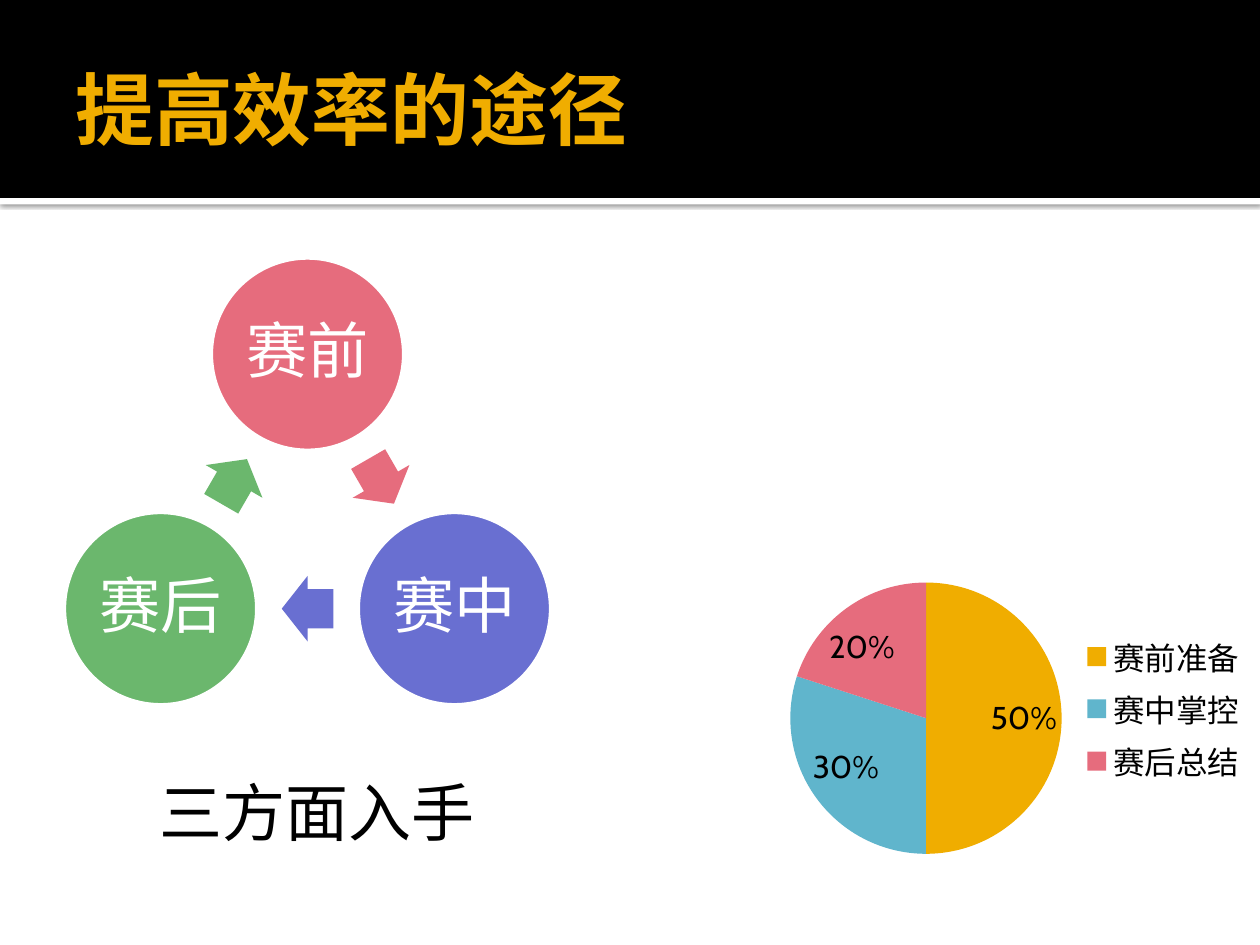
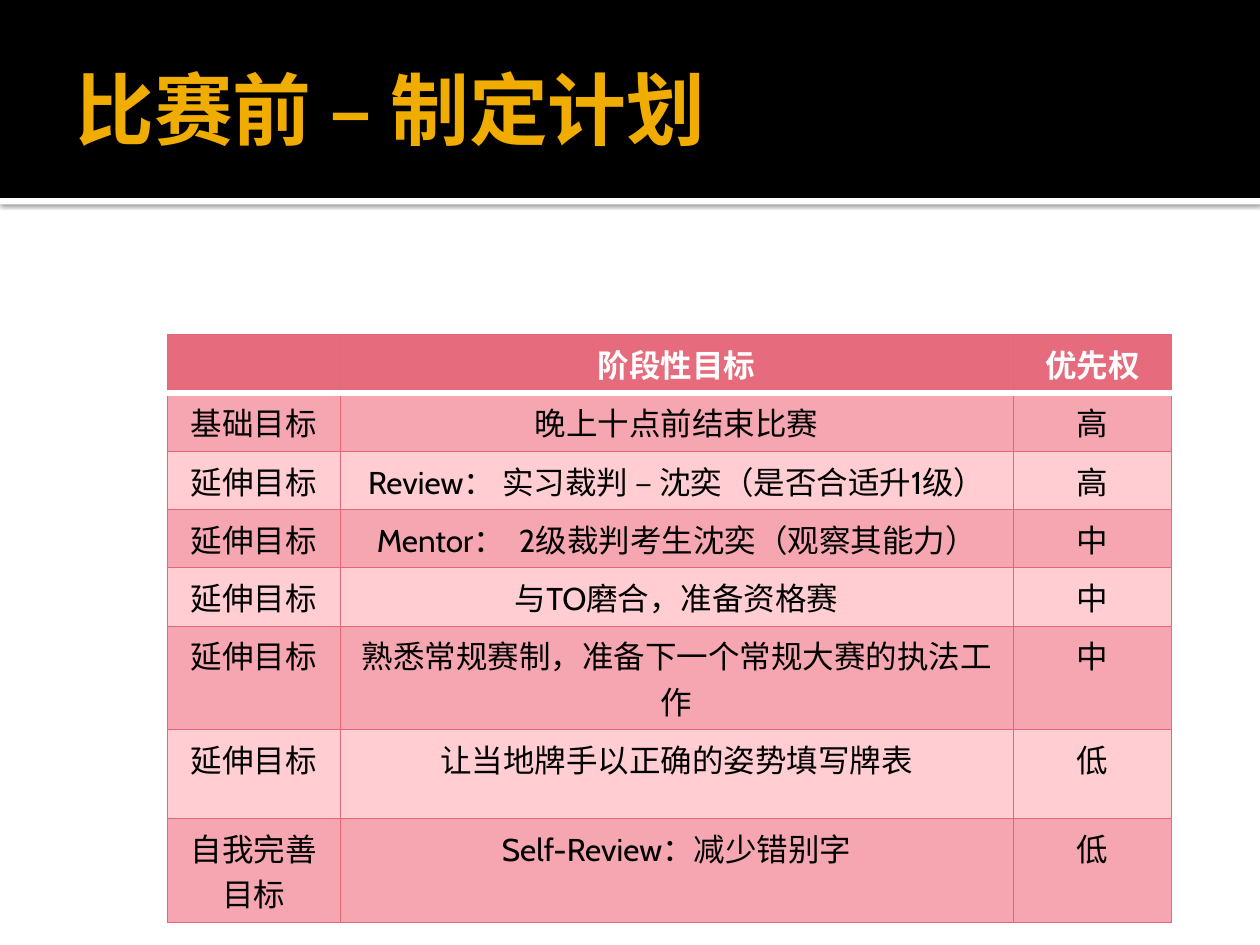
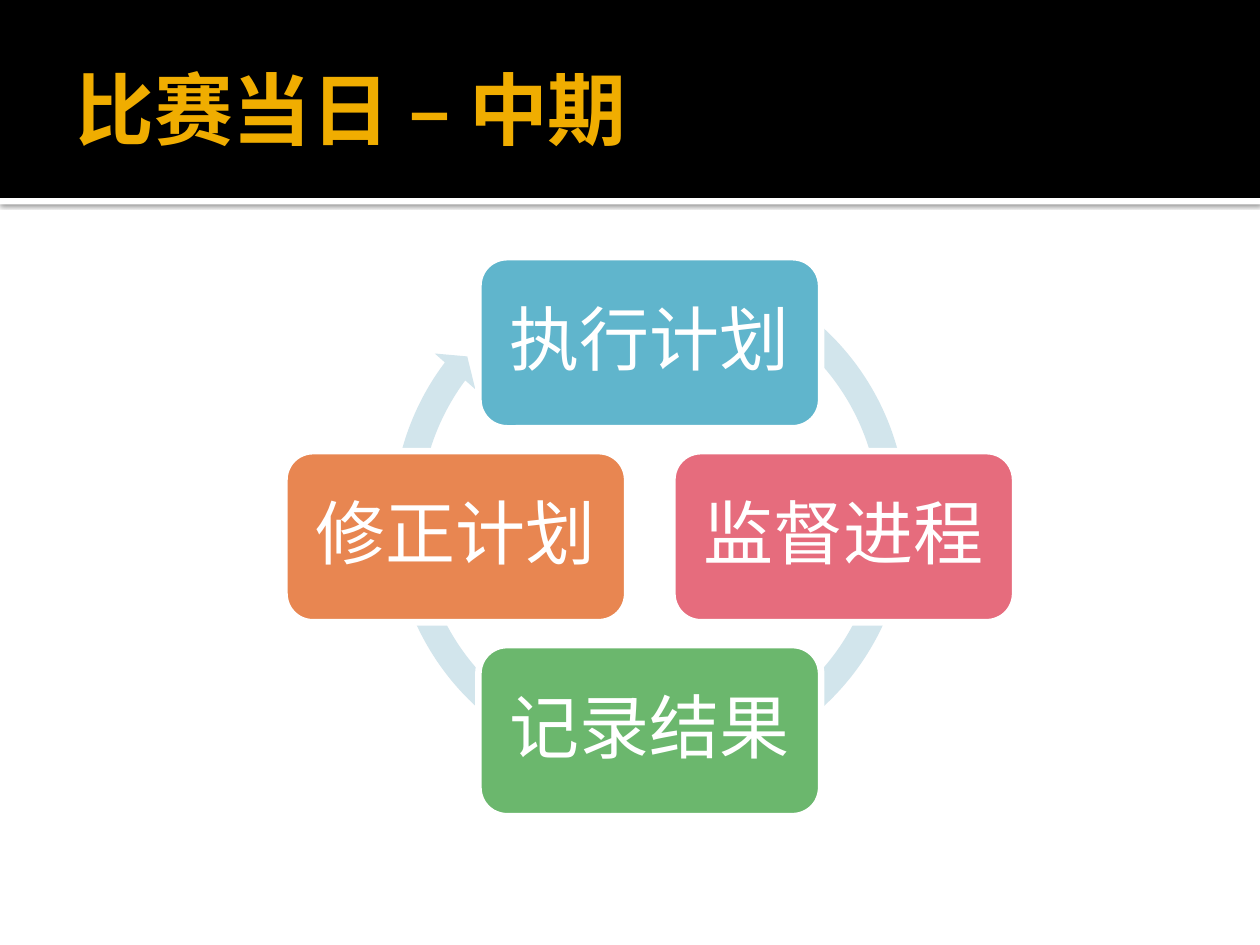
from math import cos, sin, radians
from pptx import Presentation
from pptx import util as u
from pptx.chart import data
from pptx.dml.color import RGBColor
from pptx.enum import chart as ch, shapes, text
from pptx.oxml import parse_xml
from pptx.oxml.ns import nsdecls, qn

Cm, Pt = u.Cm, u.Pt
FONT = "Cabin"
HUES = {
    "black": "000000", "white": "FFFFFF", "gold": "F0AD00",
    "rose": "E66C7D", "blue": "60B5CC", "green": "6BB76D",
    "violet": "696FD1", "orange": "E88651", "ring": "D2E5EC",
    "edge": "E46778", "dark": "F5A6B0", "light": "FFCDD2",
}
RGB = {key: RGBColor.from_string(hue) for key, hue in HUES.items()}
MID = text.MSO_ANCHOR.MIDDLE


def write(par, words, size, hue, bold=False, align=None):
    """Add one formatted run to a paragraph."""
    par.alignment = align
    run = par.add_run()
    run.text = words
    run.font.name, run.font.size, run.font.bold = FONT, Pt(size), bold
    run.font.color.rgb = RGB[hue]


def draw(slide, kind, box, hue, words="", size=0):
    """Add a flat shape; one with words gets a white outline."""
    item = slide.shapes.add_shape(kind, *[Cm(n) for n in box])
    item.shadow.inherit = False
    item.fill.solid()
    item.fill.fore_color.rgb = RGB[hue]
    item.line.fill.background()
    if words:
        item.line.color.rgb = RGB["white"]
        item.line.width = Pt(3.78)
        frame = item.text_frame
        frame.word_wrap = False
        frame.vertical_anchor = MID
        frame.paragraphs[0].line_spacing = 0.9
        write(frame.paragraphs[0], words, size, "white",
              align=text.PP_ALIGN.CENTER)
    return item


deck = Presentation()
deck.slide_width, deck.slide_height = Cm(25.4), Cm(19.05)
base = deck.slide_layouts[5]

# Slides and titles
pages = []
for words in ("提高效率的途径", "比赛前 – 制定计划", "比赛当日 – 中期"):
    page = deck.slides.add_slide(base)
    head = page.shapes.title
    head.left, head.top, head.width, head.height = (
        Cm(1.27), Cm(0.43), Cm(22.86), Cm(3.48))
    frame = head.text_frame
    frame.auto_size = text.MSO_AUTO_SIZE.NONE
    frame.vertical_anchor = MID
    frame.margin_left = Cm(0.25)
    frame.margin_right = frame.margin_top = frame.margin_bottom = Cm(0.13)
    write(frame.paragraphs[0], words, 45, "gold", True, text.PP_ALIGN.LEFT)
    pages.append(page)
ways, plan, day = pages

# Black band and shadowed strip, moved to the shared layout
strip = draw(ways, shapes.MSO_SHAPE.RECTANGLE, (0, 3.99, 25.4, 0.13), "white")
glow = strip._element.spPr.find(qn("a:effectLst"))
glow.append(parse_xml(
    f'<a:outerShdw {nsdecls("a")} blurRad="31750" dist="10160" dir="5400000">'
    '<a:srgbClr val="000000"><a:alpha val="60000"/></a:srgbClr>'
    '</a:outerShdw>'))
band = draw(ways, shapes.MSO_SHAPE.RECTANGLE, (0, 0, 25.4, 3.99), "black")
for spot, item in enumerate((strip, band), 2):
    base.shapes._spTree.insert(spot, item._element)

# Slide 1: cycle of three circles
mid_x, mid_y, orbit, disc = 6.2, 10.56, 3.42, 3.94
wide, tall = 1.04, 1.32
stages = [("赛前", "rose"), ("赛中", "violet"), ("赛后", "green")]
for k, (words, hue) in enumerate(stages):
    turn = radians(120 * k - 90)
    x, y = mid_x + orbit * cos(turn), mid_y + orbit * sin(turn)
    draw(ways, shapes.MSO_SHAPE.OVAL,
         (x - disc / 2, y - disc / 2, disc, disc), hue, words, 35)
    turn += radians(60)
    x, y = mid_x + orbit / 2 * cos(turn), mid_y + orbit / 2 * sin(turn)
    arrow = draw(ways, shapes.MSO_SHAPE.RIGHT_ARROW,
                 (x - wide / 2, y - tall / 2, wide, tall), hue)
    arrow.rotation = 60 + 120 * k
    arrow.adjustments[0] = 0.6

# Slide 1: pie
feed = data.CategoryChartData(number_format="0%")
feed.categories = ["赛前准备", "赛中掌控", "赛后总结"]
feed.add_series("Series 1", (0.5, 0.3, 0.2))
pie = ways.shapes.add_chart(ch.XL_CHART_TYPE.PIE, Cm(14.88), Cm(9.53),
                            Cm(10.52), Cm(9.52), feed).chart
pie.has_title = False
pie.font.name, pie.font.size = FONT, Pt(18)
pie.font.color.rgb = RGB["black"]
pie.has_legend = True
pie.legend.position = ch.XL_LEGEND_POSITION.RIGHT
pie.legend.include_in_layout = False
plot = pie.plots[0]
plot.vary_by_categories = True
plot.has_data_labels = True
tags = plot.data_labels
tags.show_value, tags.show_percentage = True, False
tags.number_format, tags.number_format_is_linked = "0%", False
tags.position = ch.XL_LABEL_POSITION.BEST_FIT
for k, hue in enumerate(("gold", "blue", "rose")):
    fill = plot.series[0].points[k].format.fill
    fill.solid()
    fill.fore_color.rgb = RGB[hue]
area = pie._chartSpace.chart.plotArea
for old in area.findall(qn("c:layout")):
    area.remove(old)
sides = "".join(f'<c:{key} val="{val}"/>' for key, val in (
    ("layoutTarget", "inner"), ("xMode", "edge"), ("yMode", "edge"),
    ("x", 0.1), ("y", 0.23), ("w", 0.52), ("h", 0.58)))
area.insert(0, parse_xml(
    f'<c:layout {nsdecls("c")}><c:manualLayout>{sides}'
    '</c:manualLayout></c:layout>'))

# Slide 1: caption
note = ways.shapes.add_textbox(Cm(2.97), Cm(15.47), Cm(6.93), Cm(1.8))
note.text_frame.word_wrap = False
write(note.text_frame.paragraphs[0], "三方面入手", 36, "black")

# Slide 2: table of goals
more = "延伸目标"
rows = [
    ("", "阶段性目标", "优先权"),
    ("基础目标", "晚上十点前结束比赛", "高"),
    (more, "Review： 实习裁判 – 沈奕（是否合适升1级）", "高"),
    (more, "Mentor：  2级裁判考生沈奕（观察其能力）", "中"),
    (more, "与TO磨合，准备资格赛", "中"),
    (more, "熟悉常规赛制，准备下一个常规大赛的执法工作", "中"),
    (more, "让当地牌手以正确的姿势填写牌表", "低"),
    ("自我完善目标", "Self-Review：减少错别字", "低"),
]
grid = plan.shapes.add_table(len(rows), 3, Cm(3.38), Cm(6.75),
                             Cm(20.24), Cm(10.52)).table
for col, size in zip(grid.columns, (3.48, 13.56, 3.2)):
    col.width = Cm(size)
for r, row in enumerate(rows):
    grid.rows[r].height = Cm(1.03 if r < 5 else 1.78)
    hue = "rose" if r == 0 else "dark" if r % 2 else "light"
    for c, words in enumerate(row):
        cell = grid.cell(r, c)
        if words:
            write(cell.text_frame.paragraphs[0], words, 18,
                  "black" if r else "white", r == 0, text.PP_ALIGN.CENTER)
        # Borders go before the fill in the cell properties
        props = cell._tc.get_or_add_tcPr()
        for side in "LRTB":
            thick = (r, side) in ((0, "B"), (1, "T"))
            ink = HUES["white" if thick else "edge"]
            props.append(parse_xml(
                f'<a:ln{side} {nsdecls("a")} w="{Pt(3.78 if thick else 0.5)}">'
                f'<a:solidFill><a:srgbClr val="{ink}"/></a:solidFill>'
                f'</a:ln{side}>'))
        cell.fill.solid()
        cell.fill.fore_color.rgb = RGB[hue]

# Slide 3: ring arrow under four boxes
ring = draw(day, shapes.MSO_SHAPE.CIRCULAR_ARROW,
            (7.65, 4.98, 10.9, 10.9), "ring")
for k, val in enumerate((0.05, 2.73, 130.11, 179.1, 0.05)):
    ring.adjustments[k] = val
mid_x, mid_y, step, wide, tall = 13.1, 10.82, 3.91, 6.91, 3.45
tasks = [("执行计划", "blue", 0, -1), ("监督进程", "rose", 1, 0),
         ("记录结果", "green", 0, 1), ("修正计划", "orange", -1, 0)]
for words, hue, dx, dy in tasks:
    draw(day, shapes.MSO_SHAPE.ROUNDED_RECTANGLE,
         (mid_x + dx * step - wide / 2, mid_y + dy * step - tall / 2,
          wide, tall), hue, words, 40)

deck.save("out.pptx")
